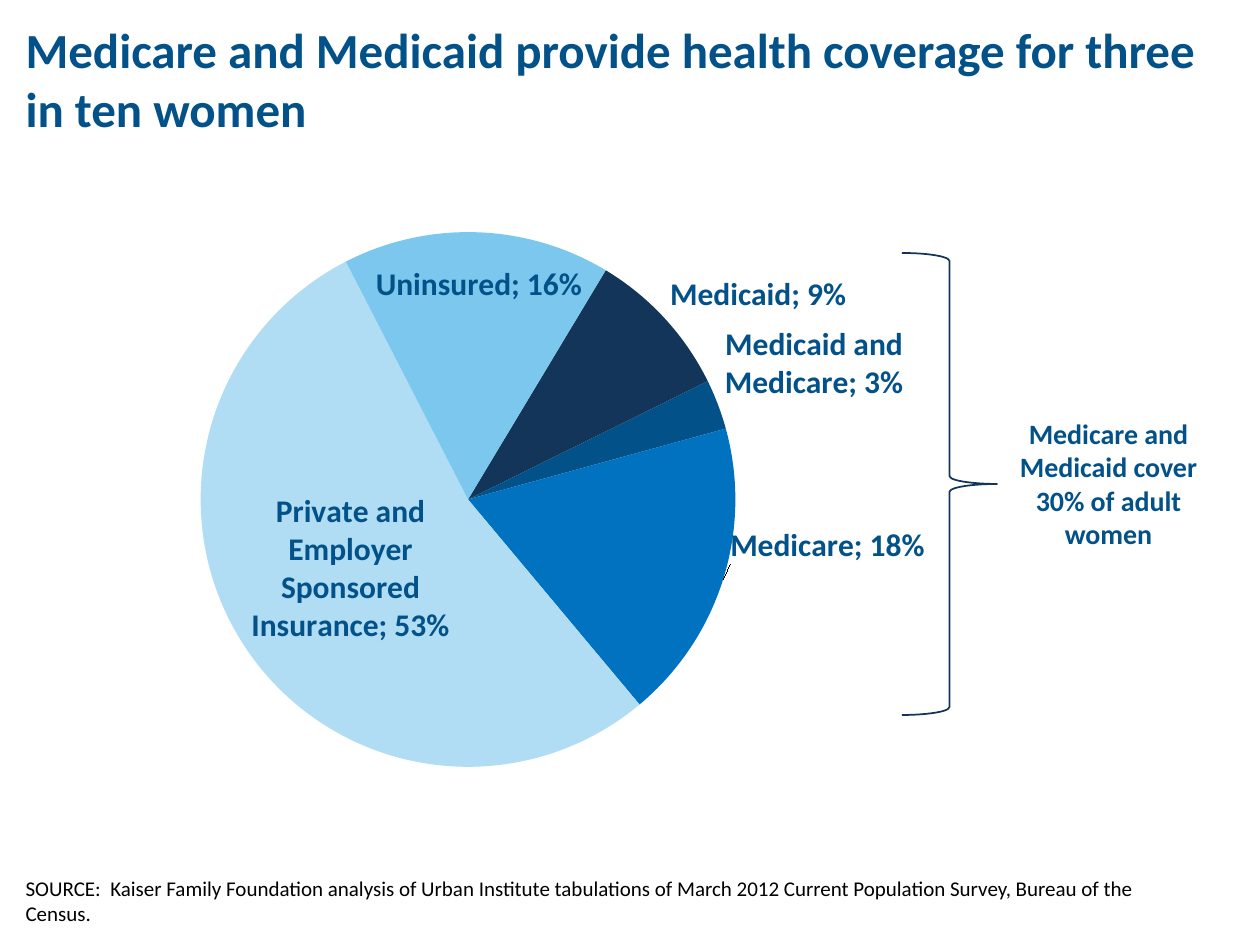
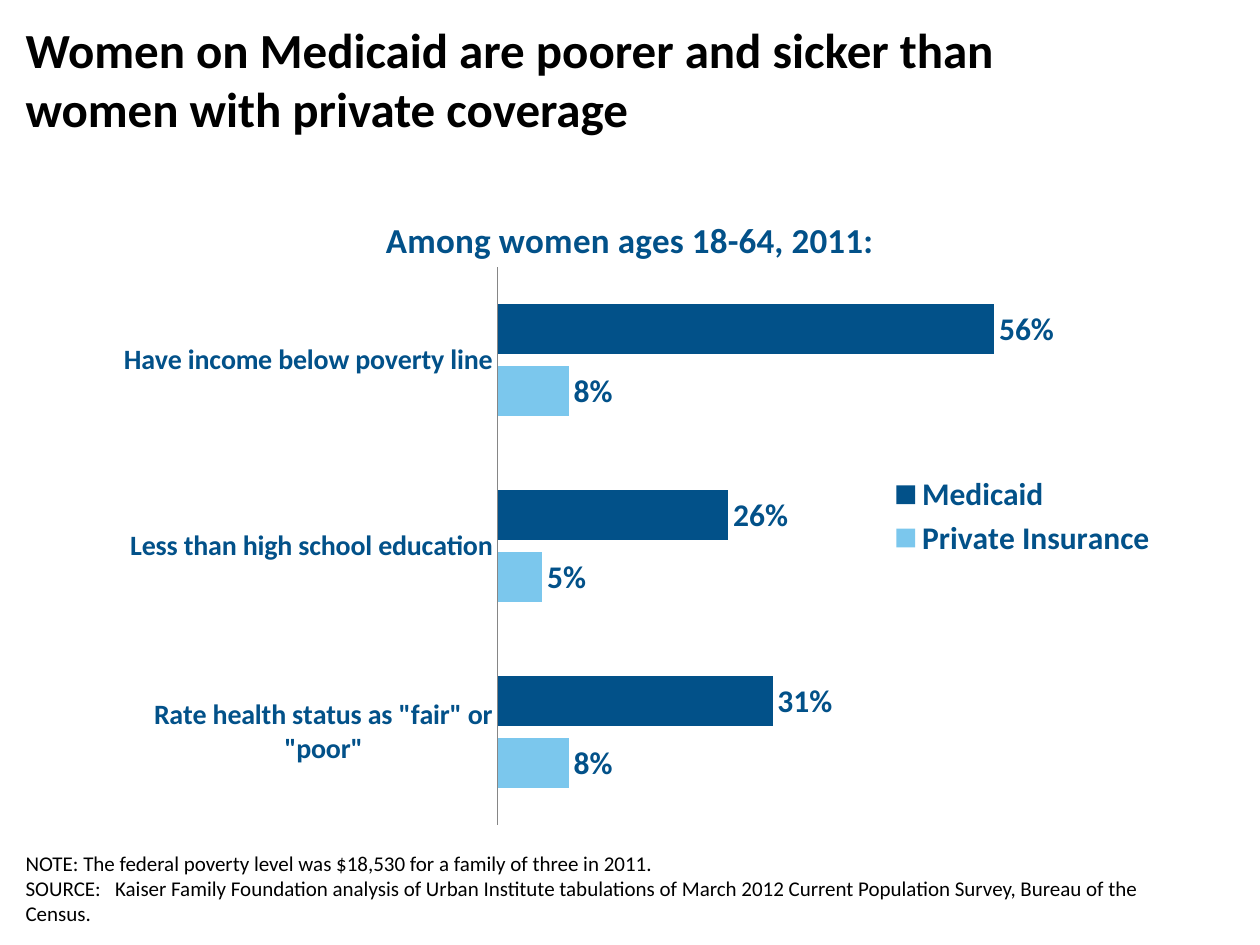
from dataclasses import dataclass

from lxml import etree
from pptx import Presentation
from pptx.chart.data import CategoryChartData
from pptx.dml.color import RGBColor
from pptx.enum.chart import (XL_CHART_TYPE, XL_LABEL_POSITION,
                             XL_LEGEND_POSITION, XL_TICK_MARK)
from pptx.enum.shapes import MSO_SHAPE
from pptx.enum.text import MSO_ANCHOR, MSO_AUTO_SIZE, PP_ALIGN
from pptx.oxml.ns import qn
from pptx.util import Emu, Inches, Pt

PIE, BARS = XL_CHART_TYPE.PIE, XL_CHART_TYPE.BAR_CLUSTERED
OUTSIDE, BEST_FIT = XL_LABEL_POSITION.OUTSIDE_END, XL_LABEL_POSITION.BEST_FIT
LEGEND_RIGHT, NO_TICK = XL_LEGEND_POSITION.RIGHT, XL_TICK_MARK.NONE
BRACE = MSO_SHAPE.RIGHT_BRACE
TOP, BOTTOM = MSO_ANCHOR.TOP, MSO_ANCHOR.BOTTOM
FIXED, GROW = MSO_AUTO_SIZE.NONE, MSO_AUTO_SIZE.SHAPE_TO_FIT_TEXT
LEFT, MIDDLE = PP_ALIGN.LEFT, PP_ALIGN.CENTER

PX = 914400 / 126


@dataclass(frozen=True)
class Theme:
    font: str = "Calibri"
    black: str = "000000"
    blue: str = "025189"
    navy: str = "133559"
    bright: str = "0072C0"
    pale: str = "B0DDF4"
    sky: str = "7BC7ED"
    axis: str = "868686"
    title: int = 28
    heading: int = 20
    label: int = 18
    note: int = 16
    footer: int = 12


THEME = Theme()
TITLE_AREA = (13, 13, 1235, 126)
FOOTER_AREA = (13, 857, 1147, 75)
SOURCE = ("Kaiser Family Foundation analysis of Urban Institute tabulations of "
          "March 2012 Current Population Survey, Bureau of the Census.")


def emu(pixels):
    return Emu(round(pixels * PX))


def manual_layout(parent, index, inner=False, **values):
    """Give a chart part a manual layout, placed at the index its schema asks for."""
    for old in parent.findall(qn("c:layout")):
        parent.remove(old)
    layout = etree.Element(qn("c:layout"))
    manual = etree.SubElement(layout, qn("c:manualLayout"))
    settings = {}
    if inner:
        settings["layoutTarget"] = "inner"
    if "w" in values:
        settings.update(xMode="edge", yMode="edge")
    for tag, value in {**settings, **values}.items():
        etree.SubElement(manual, qn(f"c:{tag}"), val=str(value))
    parent.insert(index, layout)


class SlideWriter:
    def __init__(self, deck, theme):
        self.deck, self.theme, self.page = deck, theme, None

    def new_page(self):
        self.page = self.deck.slides.add_slide(self.deck.slide_layouts[1])

    def style(self, font, size, color, bold=False):
        font.name, font.size, font.bold = self.theme.font, Pt(size), bold
        font.color.rgb = RGBColor.from_string(color)

    def add_span(self, para, text, size, color, bold=False):
        span = para.add_run()
        span.text = text
        self.style(span.font, size, color, bold)
        return span

    def place(self, box, area):
        box.left, box.top, box.width, box.height = map(emu, area)

    def frame(self, box, anchor, fit=FIXED):
        text = box.text_frame
        text.word_wrap, text.auto_size = True, fit
        text.vertical_anchor = anchor
        return text

    def add_title(self, lines, color):
        box = self.page.shapes.title
        self.place(box, TITLE_AREA)
        para = self.frame(box, TOP).paragraphs[0]
        para.alignment = LEFT
        for number, line in enumerate(lines):
            if number:
                para.add_line_break()
            self.add_span(para, line, self.theme.title, color, True)

    def add_footer(self, entries, lead_gap):
        """Write (lead, words) lines; lead_gap widens the space between, in 1/100 pt."""
        box = self.page.placeholders[1]
        self.place(box, FOOTER_AREA)
        text = self.frame(box, BOTTOM)
        size, color = self.theme.footer, self.theme.black
        for number, (lead, words) in enumerate(entries):
            para = text.add_paragraph() if number else text.paragraphs[0]
            para.space_before = Pt(0)
            settings = para._p.get_or_add_pPr()
            settings.set("marL", "0")
            settings.set("indent", "0")
            etree.SubElement(settings, qn("a:buNone"))
            self.add_span(para, lead, size, color)
            space = self.add_span(para, " ", size, color)
            if lead == "SOURCE:":
                space.font._element.set("spc", str(lead_gap))
            self.add_span(para, words, size, color)

    def add_note(self, words, area):
        box = self.page.shapes.add_textbox(*map(emu, area))
        para = self.frame(box, TOP, GROW).paragraphs[0]
        para.alignment = MIDDLE
        self.add_span(para, words, self.theme.note, self.theme.blue, True)

    def add_brace(self, area):
        brace = self.page.shapes.add_shape(BRACE, *map(emu, area))
        brace.shadow.inherit = False
        brace.fill.background()
        brace.line.color.rgb = RGBColor.from_string(self.theme.navy)
        brace.line.width = Pt(1)

    def add_chart(self, kind, area, categories, series, plot_layout):
        data = CategoryChartData(number_format="0%")
        data.categories = categories
        for name, values in series.items():
            data.add_series(name, values)
        chart = self.page.shapes.add_chart(kind, *map(emu, area), data).chart
        self.style(chart.font, self.theme.label, self.theme.black)
        chart.has_title = chart.has_legend = False
        plot_area = chart.plots[0]._element.getparent()
        manual_layout(plot_area, 0, True, **plot_layout)
        return chart

    def label_series(self, series, show_category=False):
        labels = series.data_labels
        self.style(labels.font, self.theme.label, self.theme.blue, True)
        labels.number_format, labels.number_format_is_linked = "0%", False
        labels.show_value, labels.show_category_name = True, show_category
        labels.position = OUTSIDE
        return labels

    def add_pie(self, area, slices, angle, plot_layout, positions, shifts):
        names = [name for name, _, _ in slices]
        values = [value for _, value, _ in slices]
        chart = self.add_chart(PIE, area, names, {"Series 1": values}, plot_layout)
        plot = chart.plots[0]
        plot.vary_by_categories = True
        for old in plot._element.findall(qn("c:firstSliceAng")):
            plot._element.remove(old)
        etree.SubElement(plot._element, qn("c:firstSliceAng"), val=str(angle))
        series = plot.series[0]
        labels = self.label_series(series, True)
        for number, (_, _, color) in enumerate(slices):
            fill = series.points[number].format.fill
            fill.solid()
            fill.fore_color.rgb = RGBColor.from_string(color)
        # Labels that leave the common position
        for number, position in positions.items():
            label = series.points[number].data_label
            self.style(label.font, self.theme.label, self.theme.blue, True)
            label.position = position
        for item in labels._element.findall(qn("c:dLbl")):
            item.find(qn("c:showCatName")).set("val", "1")
            number = int(item.find(qn("c:idx")).get("val"))
            if number in shifts:
                x, y = shifts[number]
                manual_layout(item, 1, x=x, y=y)

    def add_bars(self, area, heading, categories, series, colors, top,
                 plot_layout, legend_layout):
        chart = self.add_chart(BARS, area, categories, series, plot_layout)
        # Heading and legend
        chart.has_title = chart.has_legend = True
        self.add_span(chart.chart_title.text_frame.paragraphs[0], heading,
                      self.theme.heading, self.theme.blue, True)
        legend = chart.legend
        legend.position, legend.include_in_layout = LEGEND_RIGHT, True
        self.style(legend.font, self.theme.label, self.theme.blue, True)
        manual_layout(legend._element, 1, **legend_layout)
        # Axes
        names, scale = chart.category_axis, chart.value_axis
        names.major_tick_mark = names.minor_tick_mark = NO_TICK
        names.has_major_gridlines = scale.has_major_gridlines = False
        names.format.line.color.rgb = RGBColor.from_string(self.theme.axis)
        self.style(names.tick_labels.font, self.theme.note, self.theme.blue, True)
        scale.minimum_scale, scale.maximum_scale = 0, top
        scale.visible = False
        # Bars
        plot = chart.plots[0]
        plot.gap_width, plot.overlap = 150, -25
        plot.vary_by_categories = False
        for bars, color in zip(plot.series, colors):
            bars.format.fill.solid()
            bars.format.fill.fore_color.rgb = RGBColor.from_string(color)
            self.label_series(bars)


def coverage_slide(writer):
    theme = writer.theme
    writer.new_page()
    writer.add_title(["Medicare and Medicaid provide health coverage for three "
                      "in ten women"], theme.blue)
    slices = [("Medicaid", 0.09, theme.navy),
              ("Medicaid and Medicare", 0.03, theme.blue),
              ("Medicare", 0.18, theme.bright),
              ("Private and Employer Sponsored Insurance", 0.53, theme.pale),
              ("Uninsured", 0.16, theme.sky)]
    writer.add_pie((13, 151, 1235, 693), slices, 31,
                   dict(x=0.152, y=0.117, w=0.433, h=0.772),
                   {2: OUTSIDE, 3: BEST_FIT, 4: BEST_FIT}, {2: (0, -0.08)})
    writer.add_brace((902, 253, 95, 462))
    writer.add_note("Medicare and Medicaid cover 30% of adult women",
                    (998, 410, 221, 149))
    writer.add_footer([("SOURCE:", SOURCE)], 270)


def comparison_slide(writer):
    theme = writer.theme
    writer.new_page()
    writer.add_title(["Women on Medicaid are poorer and sicker than",
                      "women with private coverage"], theme.black)
    writer.add_bars((84, 189, 1092, 655), "Among women ages 18-64, 2011:",
                    ['Rate health status as "fair" or "poor"',
                     "Less than high school education",
                     "Have income below poverty line"],
                    {"Private Insurance": (0.08, 0.05, 0.08),
                     "Medicaid": (0.31, 0.26, 0.56)},
                    (theme.sky, theme.blue), 0.6,
                    dict(x=0.379, y=0.119, w=0.487, h=0.852),
                    dict(x=0.73, y=0.43, w=0.26, h=0.14))
    writer.add_footer([("NOTE:", "The federal poverty level was $18,530 for a "
                                 "family of three in 2011."),
                       ("SOURCE:", SOURCE)], 540)


def main():
    deck = Presentation()
    deck.slide_width, deck.slide_height = Inches(10), Inches(7.5)
    writer = SlideWriter(deck, THEME)
    coverage_slide(writer)
    comparison_slide(writer)
    deck.save("out.pptx")


if __name__ == "__main__":
    main()
